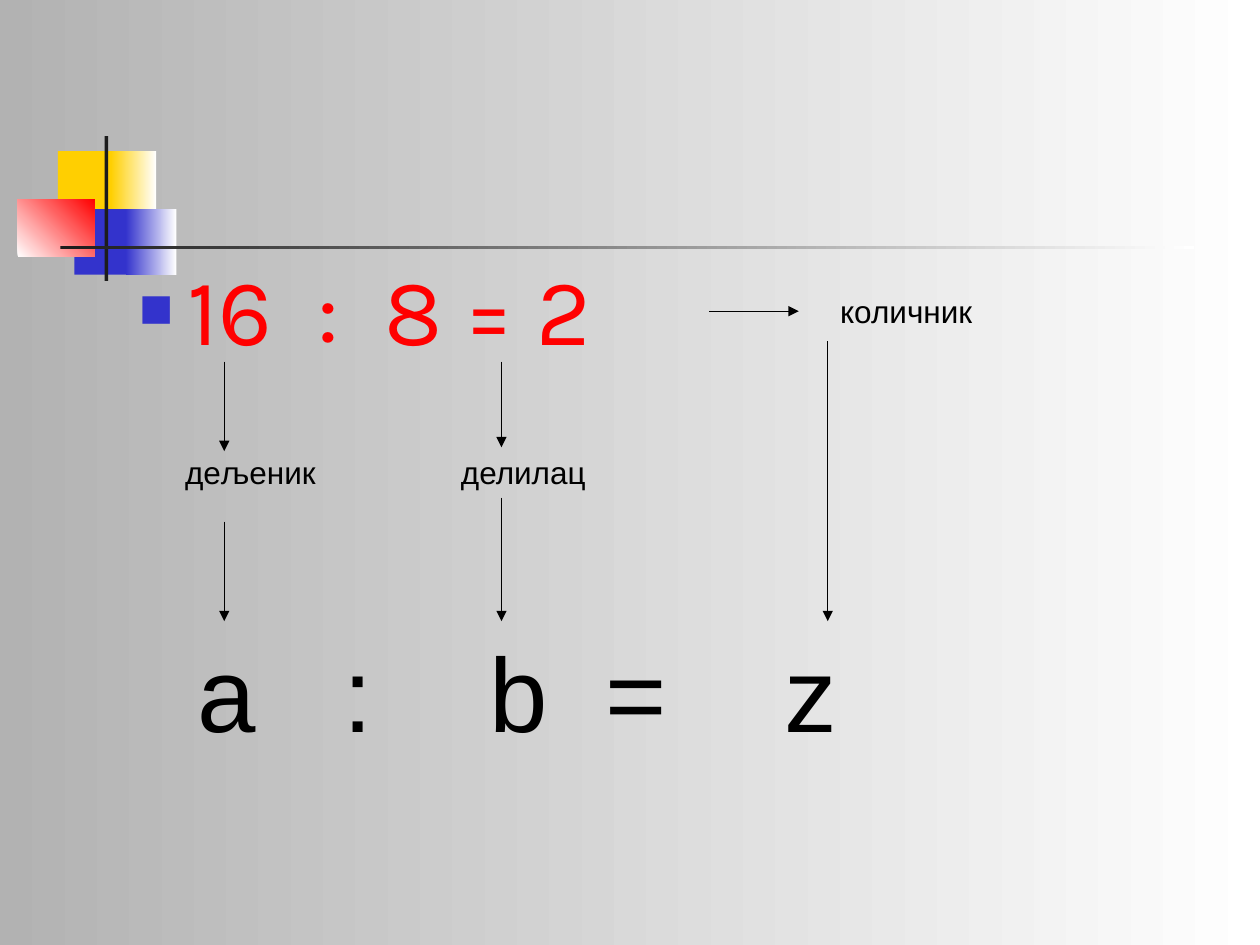
from lxml import etree
from pptx import Presentation
from pptx.dml.color import RGBColor
from pptx.enum.shapes import MSO_CONNECTOR, MSO_SHAPE
from pptx.enum.text import MSO_ANCHOR, MSO_AUTO_SIZE
from pptx.oxml.ns import qn
from pptx.util import Inches, Pt

RECT = MSO_SHAPE.RECTANGLE
LINE = MSO_CONNECTOR.STRAIGHT
TOP = MSO_ANCHOR.TOP
FIXED = MSO_AUTO_SIZE.NONE
GROW = MSO_AUTO_SIZE.SHAPE_TO_FIT_TEXT
COLS, ROWS = 100, 75
CELL = Inches(10) / COLS
GOLD, BLUE, RED = "FFCF01", "3333CC", "FF0000"
WHITE, GREY, DARK, BLACK = "FFFFFF", "B2B2B2", "1C1C1C", "000000"


def span(n):
    return round(n * CELL)


def tint(text):
    return RGBColor.from_string(text)


def style(item, form):
    for key, value in form.items():
        setattr(item, key, value)


def node(parent, tag, **attrs):
    child = etree.SubElement(parent, qn(tag))
    for key, value in attrs.items():
        child.set(key, str(value))
    return child


def paint(fill, hues, angle=0):
    if len(hues) == 1:
        fill.solid()
        fill.fore_color.rgb = tint(hues[0])
        return
    fill.gradient()
    fill.gradient_angle = angle
    for stop, hue, place in zip(fill.gradient_stops, hues, (0, 1)):
        stop.color.rgb = tint(hue)
        stop.position = place


def write(para, text, size, font, hue):
    run = para.add_run()
    run.text = text
    style(run.font, {"size": Pt(size), "name": font})
    run.font.color.rgb = tint(hue)


def emblem(slide, box):
    left, top = box
    parts = [
        (3.2, 1.2, 4.8, 5.2, [GOLD], 0),
        (7.4, 1.2, 3.6, 5.2, [GOLD, WHITE], 0),
        (4.5, 5.8, 4.6, 5.2, [BLUE], 0),
        (8.6, 5.8, 4, 5.2, [BLUE, WHITE], 0),
        (0, 5, 6.1, 4.6, [WHITE, RED], 45),
        (6.9, 0, 0.3, 11.5, [DARK], 0),
        (3.4, 8.7, 90, 0.3, [DARK, WHITE], 0),
    ]
    for x, y, wide, high, hues, angle in parts:
        part = slide.shapes.add_shape(
            RECT, *map(span, (left + x, top + y, wide, high)))
        part.shadow.inherit = False
        part.line.fill.background()
        paint(part.fill, hues, angle)


def formula(slide, box):
    body = slide.placeholders[1]
    style(body, dict(zip(("left", "top", "width", "height"), map(span, box))))
    style(body.text_frame, {"word_wrap": True, "auto_size": FIXED,
                            "vertical_anchor": TOP})
    para = body.text_frame.paragraphs[0]
    write(para, "16  :  8 = 2", 54, "Karla", RED)
    props = para._p.get_or_add_pPr()
    props.set("marL", str(span(3.8)))
    props.set("indent", str(-span(3.8)))
    node(node(props, "a:spcBef"), "a:spcPct", val=20000)
    node(node(props, "a:buClr"), "a:srgbClr", val=BLUE)
    node(props, "a:buSzPct", val=60000)
    node(props, "a:buFont", typeface="Arial")
    node(props, "a:buChar", char="■")


def label(slide, box, text, size=18, wrap=False, tabs=()):
    frame = slide.shapes.add_textbox(*map(span, box)).text_frame
    style(frame, {"word_wrap": wrap, "auto_size": GROW})
    para = frame.paragraphs[0]
    write(para, text, size, "Arial", BLACK)
    if tabs:
        stops = node(para._p.get_or_add_pPr(), "a:tabLst")
        for stop in tabs:
            node(stops, "a:tab", pos=span(stop), algn="l")


def arrow(slide, start, end):
    link = slide.shapes.add_connector(LINE, *map(span, start + end))
    link.line.width = Pt(0.75)
    link.line.color.rgb = tint(BLACK)
    node(link.line._get_or_add_ln(), "a:tailEnd", type="triangle")
    node(link._element.spPr, "a:effectLst")


def terms(slide, box):
    left, top, wide, high = box
    base = top + high
    first, second, third = left + 4.1, left + 26.1, left + wide
    label(slide, (left, top + 12.8, 12.5, 4), "дељеник")
    label(slide, (left + 21.9, top + 12.8, 12.5, 4), "делилац", wrap=True)
    label(slide, (third, top, 12.6, 4), "количник")
    for start, end in [
        ((first, top + 6), (first, top + 13.1)),
        ((second, top + 6), (second, top + 12.8)),
        ((first, top + 18.7), (first, base)),
        ((second, top + 16.8), (second, base)),
        ((third, top + 4.4), (third, base)),
        ((third - 9.4, top + 2), (third - 2.3, top + 2)),
    ]:
        arrow(slide, start, end)


def main():
    deck = Presentation()
    style(deck, {"slide_width": span(COLS), "slide_height": span(ROWS)})
    slide = deck.slides.add_slide(deck.slide_layouts[1])
    title = slide.shapes.title._element
    title.getparent().remove(title)
    paint(slide.background.fill, [GREY, WHITE])
    emblem(slide, (1.4, 10.8))
    formula(slide, (10.1, 19.4, 70.3, 44.1))
    terms(slide, (13.7, 22.7, 52, 26.6))
    label(slide, (10.1, 49.3, 57.8, 11.1), "\ta\t:\tb\t=\tz", 60,
          tabs=(4.6, 16.2, 27.8, 37, 51.2))
    deck.save("out.pptx")


if __name__ == "__main__":
    main()
